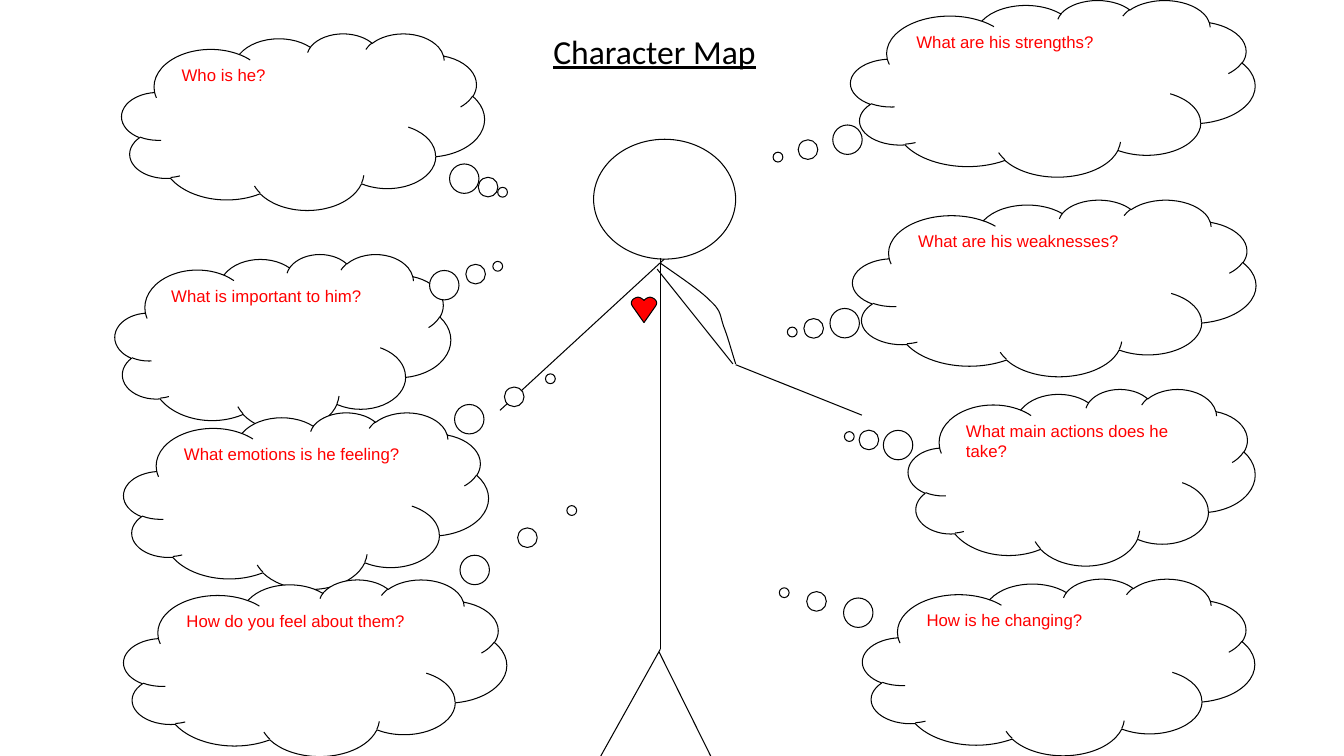
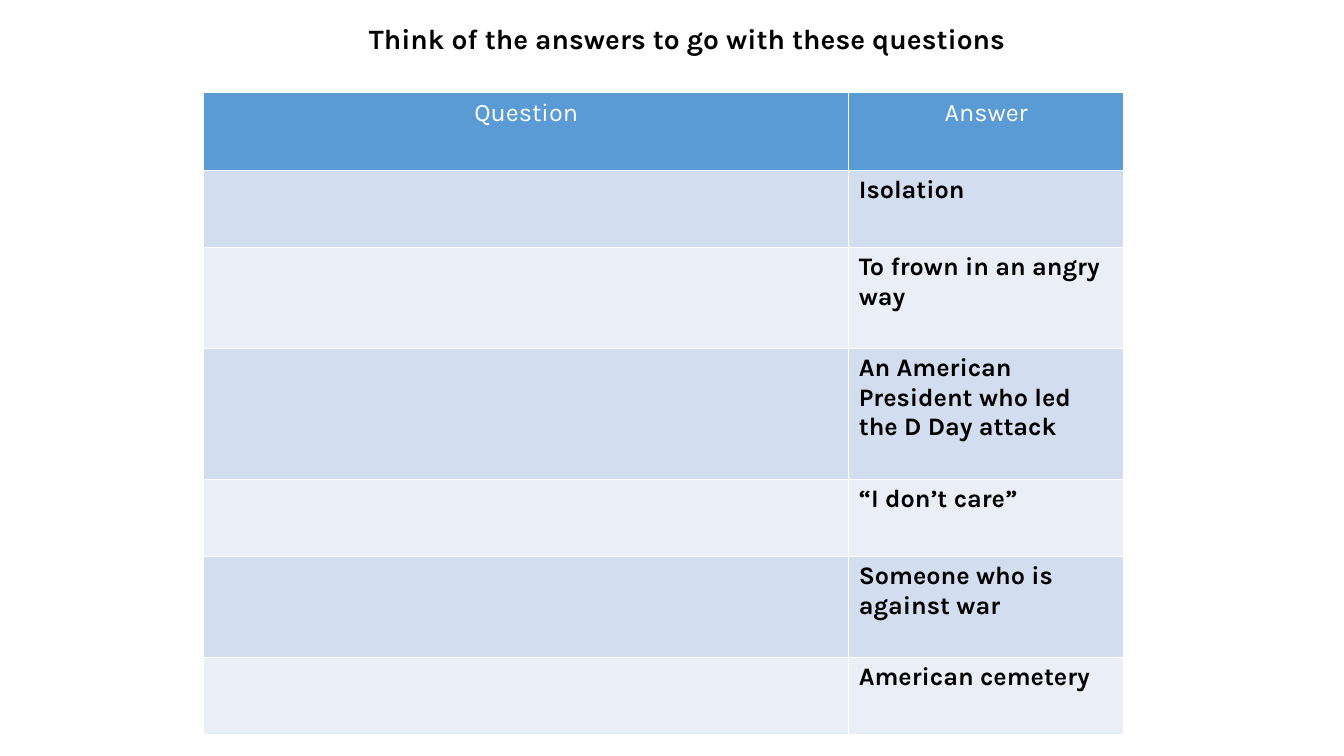
from dataclasses import dataclass

from lxml.etree import SubElement
from pptx import Presentation
from pptx.dml.color import RGBColor as Rgb
from pptx.enum.shapes import MSO_CONNECTOR as Link, MSO_SHAPE as Preset
from pptx.enum.text import MSO_ANCHOR as Anchor, MSO_AUTO_SIZE as AutoSize, PP_ALIGN as Align
from pptx.oxml.ns import qn
from pptx.util import Cm, Pt


@dataclass(frozen=True)
class Theme:
    ink: str = "000000"
    paper: str = "FFFFFF"
    accent: str = "FF0000"
    header: str = "5B9BD5"
    bands: tuple = ("D2DEEF", "EAEFF7")
    plain_font: str = "Calibri"
    cloud_font: str = "Arial"
    quiz_font: str = "Karla"
    map_title: int = 24
    quiz_title: int = 20
    table_text: int = 18
    cloud_text: int = 12
    outline: float = 0.75
    border: int = 1


THEME = Theme()

# Character map, in centimetres: left, top, width, pointer x and y, question
CLOUD_HEIGHT = 4.45
CLOUDS = [
    (3.07, 0.84, 9.14, 0.55, 0.4, "Who is he?"),
    (21.44, 0, 10.19, -0.68, 0.39, "What are his strengths?"),
    (2.9, 6.4, 8.46, 0.64, -0.43, "What is important to him?"),
    (21.49, 5.03, 10.16, -0.65, 0.25, "What are his weaknesses?"),
    (3.12, 10.39, 9.19, 0.67, -0.69, "What emotions is he feeling?"),
    (22.89, 9.8, 8.74, -0.67, -0.23, "What main actions does he take?"),
    (3.12, 14.6, 9.65, 0.67, -0.89, "How do you feel about them?"),
    (21.74, 14.58, 9.88, -0.7, -0.42, "How is he changing?"),
]
LIMBS = [
    (16.64, 6.5, 16.64, 16.36),    # spine
    (16.74, 6.53, 12.6, 10.34),    # left arm
    (16.56, 6.78, 18.47, 9.17),    # right upper arm
    (18.54, 9.19, 21.72, 10.46),   # right forearm
    (16.64, 16.36, 15.14, 19.05),  # left leg
    (16.61, 16.43, 17.91, 19.05),  # right leg
]
SLEEVE = [
    ((16.64, 6.63), (17.15, 6.99), (17.65, 7.32), (17.91, 7.59)),
    ((17.91, 7.59), (18.19, 7.85), (18.14, 7.95), (18.24, 8.23)),
    ((18.24, 8.23), (18.34, 8.48), (18.49, 9.02), (18.54, 9.17)),
]
# Left half of the heart, measured from its top centre
HEART_CENTRE, HEART_TOP, HEART_TIP = 16.23, 7.49, 0.64
HEART_HALF = [
    ((0, 0.08), (-0.03, 0.05), (-0.09, 0), (-0.16, 0)),
    ((-0.16, 0), (-0.27, 0.02), (-0.38, 0.12), (-0.28, 0.24)),
]

# Quiz rows: height and answer
ANSWERS = [
    (1.95, "Isolation"),
    (2.54, "To frown in an angry way"),
    (3.3, "An American President who led the D Day attack"),
    (1.95, "“I don’t care”"),
    (2.54, "Someone who is against war"),
    (1.95, "American cemetery"),
]


def write(frame, text, *, size, font, color=THEME.ink, bold=False,
          underline=False, align=Align.LEFT):
    para = frame.paragraphs[0]
    para.alignment = align
    span = para.add_run()
    span.text = text
    span.font.size, span.font.name = Pt(size), font
    span.font.bold, span.font.underline = bold, underline
    span.font.color.rgb = Rgb.from_string(color)


def trace(curves, steps=10):
    """Points along a chain of cubic curves."""
    points = [curves[0][0]]
    for curve in curves:
        for step in range(1, steps + 1):
            t = step / steps
            weights = ((1 - t) ** 3, 3 * t * (1 - t) ** 2, 3 * t * t * (1 - t), t ** 3)
            points.append(tuple(sum(w * point[axis] for w, point in zip(weights, curve))
                                for axis in (0, 1)))
    return points


class Painter:
    def __init__(self, deck, theme):
        self.deck, self.theme, self.page = deck, theme, None

    def new_page(self):
        self.page = self.deck.slides.add_slide(self.deck.slide_layouts[5])

    def title(self, text, left, top, width, height, **style):
        box = self.page.shapes.title
        box.left, box.top, box.width, box.height = map(Cm, (left, top, width, height))
        frame = box.text_frame
        frame.word_wrap, frame.auto_size = True, AutoSize.NONE
        frame.vertical_anchor = Anchor.TOP
        write(frame, text, **style)

    def stroke(self, item):
        item.line.color.rgb = Rgb.from_string(self.theme.ink)
        item.line.width = Pt(self.theme.outline)

    def finish(self, shape, fill):
        shape.shadow.inherit = False
        if fill:
            shape.fill.solid()
            shape.fill.fore_color.rgb = Rgb.from_string(fill)
        else:
            shape.fill.background()
        self.stroke(shape)

    def shape(self, preset, left, top, width, height):
        shape = self.page.shapes.add_shape(preset, *map(Cm, (left, top, width, height)))
        self.finish(shape, self.theme.paper)
        return shape

    def cloud(self, left, top, width, point_x, point_y, text):
        cloud = self.shape(Preset.CLOUD_CALLOUT, left, top, width, CLOUD_HEIGHT)
        cloud.adjustments[0], cloud.adjustments[1] = point_x, point_y
        cloud.text_frame.word_wrap = True
        cloud.text_frame.vertical_anchor = Anchor.TOP
        write(cloud.text_frame, text, size=self.theme.cloud_text,
              font=self.theme.cloud_font, color=self.theme.accent)

    def line(self, *ends):
        line = self.page.shapes.add_connector(Link.STRAIGHT, *map(Cm, ends))
        self.stroke(line)
        SubElement(line._element.spPr, qn("a:effectLst"))

    def outline(self, points, fill=None):
        first, *rest = [(Cm(x), Cm(y)) for x, y in points]
        builder = self.page.shapes.build_freeform(*first)
        builder.add_line_segments(rest, close=bool(fill))
        self.finish(builder.convert_to_shape(), fill)

    def cell(self, cell, text, fill, **style):
        props = cell._tc.get_or_add_tcPr()
        for side in ("a:lnL", "a:lnR", "a:lnT", "a:lnB"):
            border = SubElement(props, qn(side), w=str(Pt(self.theme.border)))
            paint = SubElement(border, qn("a:solidFill"))
            SubElement(paint, qn("a:srgbClr"), val=self.theme.paper)
        cell.fill.solid()
        cell.fill.fore_color.rgb = Rgb.from_string(fill)
        if text:
            write(cell.text_frame, text, size=self.theme.table_text,
                  font=self.theme.quiz_font, **style)

    def table(self, left, top, widths, header, header_height, rows):
        heights = [header_height] + [height for height, _ in rows]
        table = self.page.shapes.add_table(
            len(heights), len(widths), Cm(left), Cm(top),
            Cm(sum(widths)), Cm(sum(heights))).table
        for column, width in zip(table.columns, widths):
            column.width = Cm(width)
        for row, height in zip(table.rows, heights):
            row.height = Cm(height)
        for column, label in enumerate(header):
            self.cell(table.cell(0, column), label, self.theme.header,
                      color=self.theme.paper, align=Align.CENTER)
        for index, (_, answer) in enumerate(rows):
            band = self.theme.bands[index % 2]
            for column, text in enumerate(("", answer)):
                self.cell(table.cell(index + 1, column), text, band, bold=True)


def character_map(painter):
    theme = painter.theme
    painter.new_page()
    painter.title("Character Map", 13.69, 0.64, 6.45, 1.27, size=theme.map_title,
                  font=theme.plain_font, underline=True)
    # Figure
    painter.shape(Preset.OVAL, 14.96, 3.51, 3.58, 3.02)
    for limb in LIMBS:
        painter.line(*limb)
    painter.outline(trace(SLEEVE))
    half = trace(HEART_HALF)
    heart = half + [(0, HEART_TIP)] + [(-x, y) for x, y in reversed(half[1:])]
    painter.outline([(HEART_CENTRE + x, HEART_TOP + y) for x, y in heart], theme.accent)
    # Questions
    for cloud in CLOUDS:
        painter.cloud(*cloud)


def answer_quiz(painter):
    theme = painter.theme
    painter.new_page()
    painter.title("Think of the answers to go with these questions", 6.32, 0.41, 22, 1.12,
                  size=theme.quiz_title, font=theme.quiz_font, bold=True,
                  align=Align.CENTER)
    painter.table(5.13, 2.34, (16.26, 6.93), ("Question", "Answer"), 1.95, ANSWERS)


def main():
    deck = Presentation()
    deck.slide_width, deck.slide_height = Cm(33.87), Cm(19.05)
    painter = Painter(deck, THEME)
    character_map(painter)
    answer_quiz(painter)
    deck.save("out.pptx")


if __name__ == "__main__":
    main()
